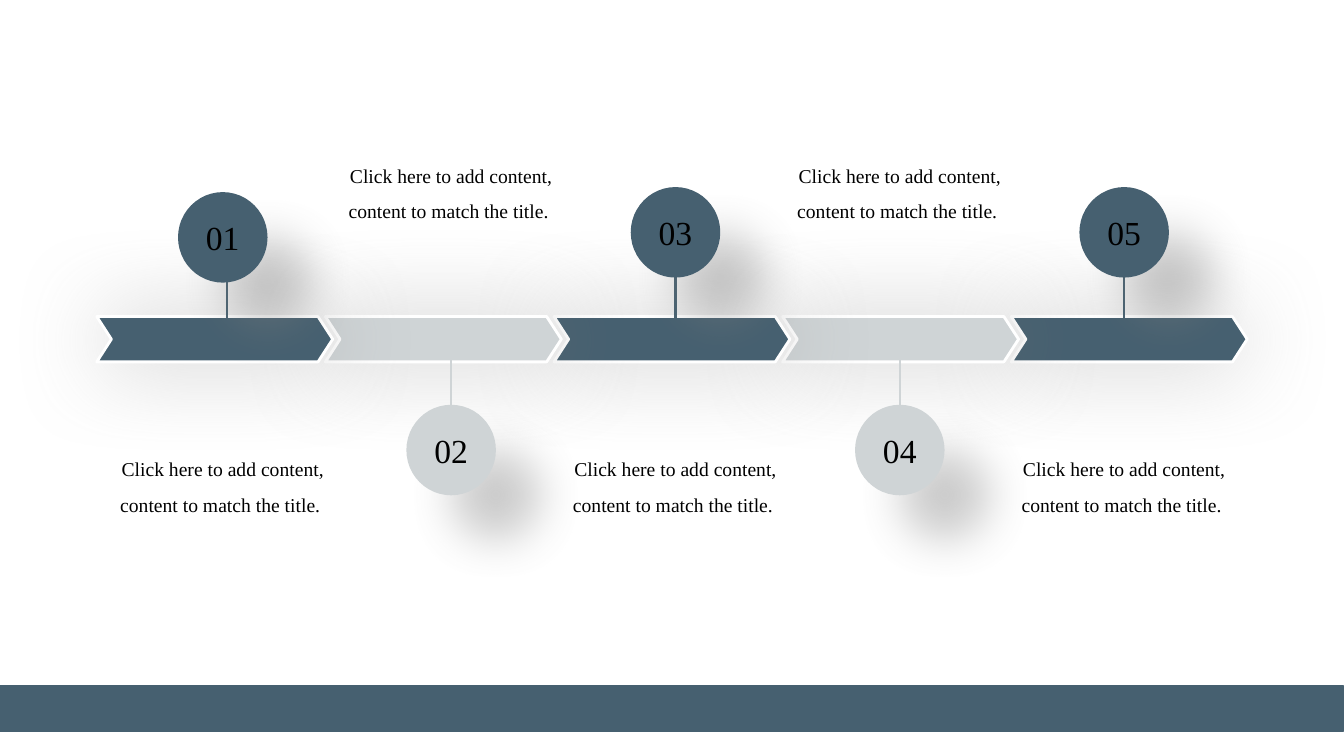
from lxml.etree import SubElement
from pptx import Presentation
from pptx.dml.color import RGBColor
from pptx.enum.shapes import MSO_CONNECTOR, MSO_SHAPE
from pptx.enum.text import MSO_ANCHOR, MSO_AUTO_SIZE, PP_ALIGN
from pptx.oxml.ns import qn
from pptx.util import Inches, Pt

COLORS = {"slate": "466070", "mist": "CFD4D6", "white": "FFFFFF",
          "black": "000000", "shadow": "808080"}
FONT = "Times New Roman"
CONTENT = "Click here to add content, content to match the title. "
STEP_COUNT = 5
FIRST_CENTER, CENTER_PITCH = 2.25, 2.225
FIRST_NUDGE = -0.04  # the first badge and text sit slightly left of their stem


def color(name):
    return RGBColor.from_string(COLORS[name])


def step_color(index):
    return "mist" if index % 2 else "slate"


def add_block(page, kind, box, fill, line, width):
    """Filled and outlined preset shape in a (left, top, width, height) box."""
    shape = page.shapes.add_shape(kind, *map(Inches, box))
    shape.shadow.inherit = False
    shape.fill.solid()
    shape.fill.fore_color.rgb = color(fill)
    shape.line.color.rgb = color(line)
    shape.line.width = Pt(width)
    return shape


def add_shadow(shape, blur, distance, angle):
    effects = shape._element.spPr.find(qn("a:effectLst"))
    shadow = SubElement(effects, qn("a:outerShdw"), blurRad=str(Pt(blur)),
                        dist=str(Pt(distance)), dir=str(angle * 60000),
                        algn="ctr", rotWithShape="0")
    tint = SubElement(shadow, qn("a:srgbClr"), val=COLORS["shadow"])
    SubElement(tint, qn("a:alpha"), val="40000")


def write(frame, text, size, spacing=None):
    para = frame.paragraphs[0]
    para.text = text
    para.alignment = PP_ALIGN.CENTER
    para.line_spacing = spacing
    para.font.name = FONT
    para.font.size = Pt(size)
    para.font.color.rgb = color("black")


def add_arrow_band(page, left, top, pitch):
    """Row of overlapping chevrons, the leftmost in front."""
    for index in reversed(range(STEP_COUNT)):
        chevron = add_block(page, MSO_SHAPE.CHEVRON,
                            (left + index * pitch, top, 2.34, 0.45),
                            step_color(index), "white", 2)
        chevron.adjustments[0] = 0.323
        add_shadow(chevron, 67, 0, 0)


def add_stem(page, center, start, end, fill):
    """Line from the band to a badge, with a round end on the band."""
    stem = page.shapes.add_connector(
        MSO_CONNECTOR.STRAIGHT, *map(Inches, (center, start, center, end)))
    stem.line.color.rgb = color(fill)
    stem.line.width = Pt(1.5)
    SubElement(stem.line._get_or_add_ln(), qn("a:headEnd"), type="oval")
    SubElement(stem._element.spPr, qn("a:effectLst"))


def add_badge(page, center, top, number, fill):
    badge = add_block(page, MSO_SHAPE.OVAL, (center - 0.43, top, 0.86, 0.87),
                      fill, fill, 2)
    add_shadow(badge, 33, 45, 45)
    frame = badge.text_frame
    frame.word_wrap = False
    frame.vertical_anchor = MSO_ANCHOR.MIDDLE
    write(frame, f"{number:02}", 24)


def add_caption(page, center, top):
    box = page.shapes.add_textbox(
        *map(Inches, (center - 1.36, top, 2.72, 0.77)))
    frame = box.text_frame
    frame.word_wrap = True
    frame.auto_size = MSO_AUTO_SIZE.SHAPE_TO_FIT_TEXT
    write(frame, CONTENT, 14, 1.5)


def add_timeline(page):
    add_arrow_band(page, 0.96, 3.14, 2.2675)
    steps = [(index, FIRST_CENTER + index * CENTER_PITCH,
              0 if index else FIRST_NUDGE) for index in range(STEP_COUNT)]

    # Stems: odd steps go up, even steps go down
    for index, center, _ in steps:
        start, end = (3.39, 4.09) if index % 2 else (3.34, 2.64)
        add_stem(page, center, start, end, step_color(index))

    # Numbered badges
    for index, center, nudge in steps:
        top = 4.03 if index % 2 else 1.87 if index else 1.92
        add_badge(page, center + nudge, top, index + 1, step_color(index))

    # Captions on the side opposite the badge
    for index, center, nudge in steps:
        add_caption(page, center + nudge, 1.46 if index % 2 else 4.37)


def main():
    deck = Presentation()
    deck.slide_width, deck.slide_height = Inches(13.33), Inches(7.5)
    page = deck.slides.add_slide(deck.slide_layouts[6])
    page.background.fill.solid()
    page.background.fill.fore_color.rgb = color("white")

    # Footer band
    add_block(page, MSO_SHAPE.RECTANGLE, (-0.03, 6.8, 13.35, 0.46),
              "slate", "slate", 1)
    add_timeline(page)
    deck.save("out.pptx")


if __name__ == "__main__":
    main()
